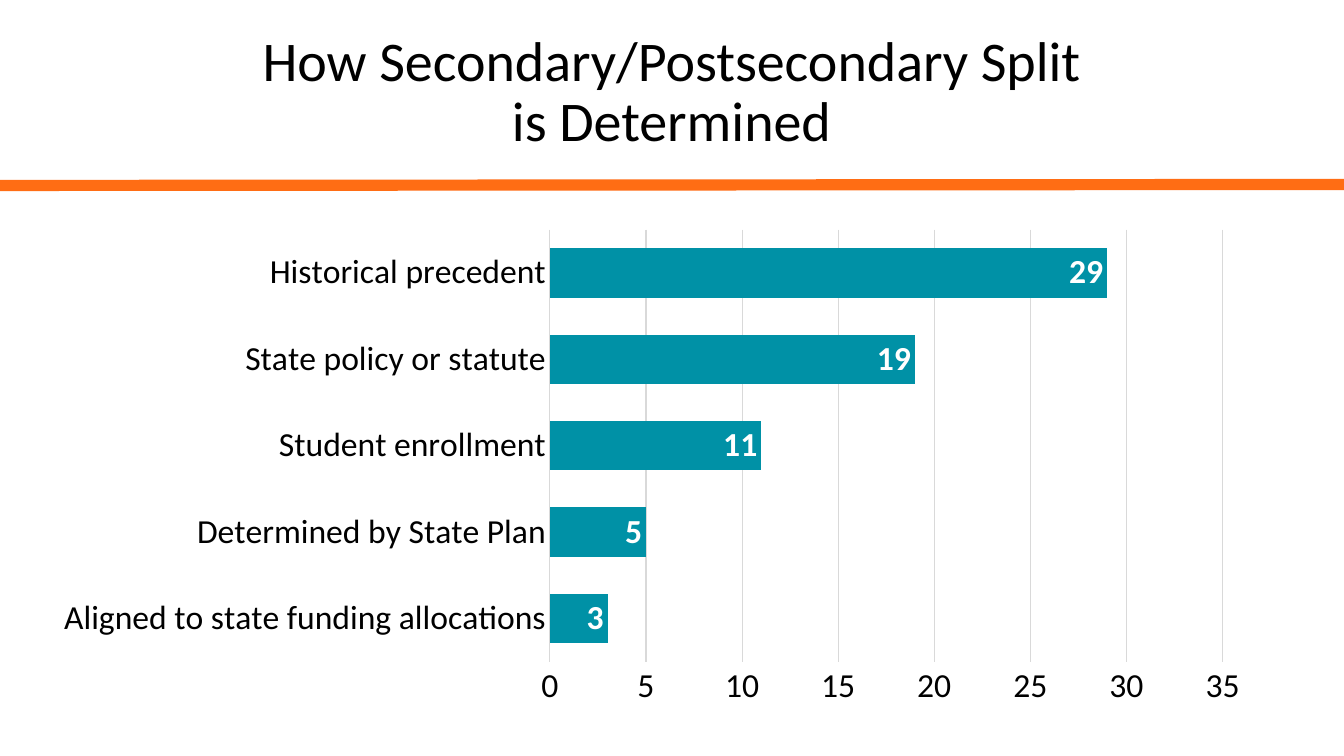
from lxml import etree
from pptx import Presentation
from pptx.chart.data import CategoryChartData
from pptx.dml.color import RGBColor
from pptx.enum.chart import XL_CHART_TYPE, XL_LABEL_POSITION, XL_TICK_MARK
from pptx.enum.shapes import MSO_CONNECTOR
from pptx.enum.text import MSO_ANCHOR, PP_ALIGN
from pptx.oxml.ns import qn
from pptx.util import Inches, Pt

BAR_CLUSTERED = XL_CHART_TYPE.BAR_CLUSTERED
INSIDE_END = XL_LABEL_POSITION.INSIDE_END
NO_TICK = XL_TICK_MARK.NONE
STRAIGHT = MSO_CONNECTOR.STRAIGHT
MIDDLE = MSO_ANCHOR.MIDDLE
CENTER = PP_ALIGN.CENTER

BLACK = RGBColor(0x00, 0x00, 0x00)
WHITE = RGBColor(0xFF, 0xFF, 0xFF)
ORANGE = RGBColor(0xFF, 0x6D, 0x14)
TEAL = RGBColor(0x00, 0x91, 0xA6)
GRID_GRAY = RGBColor(0xD9, 0xD9, 0xD9)
FONT = "Calibri"

SPLIT_METHODS = [
    ("Aligned to state funding allocations", 3),
    ("Determined by State Plan", 5),
    ("Student enrollment", 11),
    ("State policy or statute", 19),
    ("Historical precedent", 29),
]
# Inner plot area as fractions of the chart frame
PLOT_LAYOUT = {"x": 0.42, "y": 0.02, "w": 0.55, "h": 0.87}


def format_font(font, size, color, bold=False):
    font.name = FONT
    font.size = Pt(size)
    font.color.rgb = color
    font.bold = bold


def format_line(line, color, width):
    line.color.rgb = color
    line.width = Pt(width)


def add_divider(slide):
    divider = slide.shapes.add_connector(
        STRAIGHT, Inches(0), Inches(1.84), Inches(13.33), Inches(1.83))
    format_line(divider.line, ORANGE, 8)
    etree.SubElement(divider.element.spPr, qn("a:effectLst"))


def set_title(slide, wording):
    title = slide.shapes.title
    title.left, title.top = Inches(2.35), Inches(0)
    title.width, title.height = Inches(8.62), Inches(1.85)
    frame = title.text_frame
    frame.text = wording
    frame.word_wrap = True
    frame.vertical_anchor = MIDDLE
    heading = frame.paragraphs[0]
    heading.alignment = CENTER
    heading.line_spacing = 0.9
    format_font(heading.runs[0].font, 40, BLACK)


def set_plot_layout(chart):
    plot_area = chart.element.find(".//" + qn("c:plotArea"))
    layout = plot_area.find(qn("c:layout"))
    if layout is None:
        layout = etree.Element(qn("c:layout"))
        plot_area.insert(0, layout)
    manual = etree.SubElement(layout, qn("c:manualLayout"))
    settings = {"layoutTarget": "inner", "xMode": "edge", "yMode": "edge",
                **PLOT_LAYOUT}
    for tag, value in settings.items():
        etree.SubElement(manual, qn("c:" + tag)).set("val", str(value))


def format_axes(chart):
    categories, values = chart.category_axis, chart.value_axis
    for axis in (categories, values):
        axis.major_tick_mark = NO_TICK
        axis.minor_tick_mark = NO_TICK
    format_line(categories.format.line, GRID_GRAY, 0.75)
    values.minimum_scale, values.maximum_scale = 0, 35
    values.major_unit = 5
    values.format.line.fill.background()
    format_line(values.major_gridlines.format.line, GRID_GRAY, 0.75)


def add_split_chart(slide):
    split_data = CategoryChartData()
    split_data.categories = [method for method, _ in SPLIT_METHODS]
    split_data.add_series("Series 1", [count for _, count in SPLIT_METHODS])
    chart = slide.shapes.add_chart(
        BAR_CLUSTERED, Inches(0.36), Inches(2.18), Inches(12.13),
        Inches(4.93), split_data).chart
    chart.has_legend = False
    chart.has_title = False
    format_font(chart.font, 24, BLACK)
    set_plot_layout(chart)
    format_axes(chart)

    # Bars and their value labels
    plot = chart.plots[0]
    plot.gap_width = 75
    plot.overlap = 40
    plot.vary_by_categories = False
    bars = plot.series[0]
    bars.format.fill.solid()
    bars.format.fill.fore_color.rgb = TEAL
    labels = bars.data_labels
    labels.show_value = True
    labels.position = INSIDE_END
    format_font(labels.font, 24, WHITE, bold=True)


def main():
    deck = Presentation()
    deck.slide_width, deck.slide_height = Inches(13.33), Inches(7.5)
    slide = deck.slides.add_slide(deck.slide_layouts.get_by_name("Title Only"))
    add_divider(slide)
    set_title(slide, "How Secondary/Postsecondary Split is Determined")
    add_split_chart(slide)
    deck.save("out.pptx")


if __name__ == "__main__":
    main()
